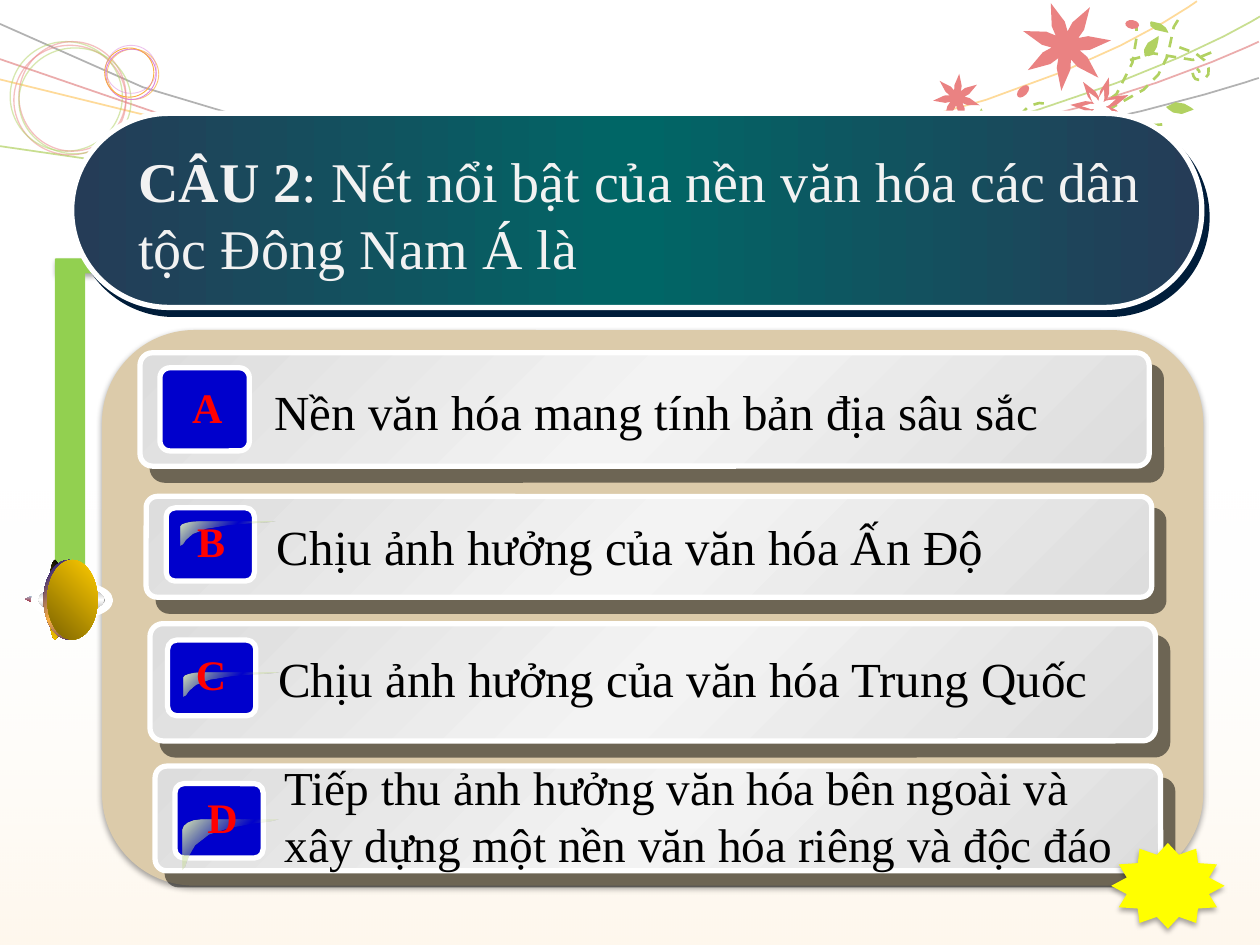
from math import cos, radians, sin

from lxml.etree import SubElement
from pptx import Presentation
from pptx.dml.color import RGBColor
from pptx.enum.dml import MSO_LINE
from pptx.enum.shapes import MSO_SHAPE
from pptx.enum.text import MSO_AUTO_SIZE, PP_ALIGN
from pptx.oxml.ns import qn
from pptx.util import Pt

FONT = "Times New Roman"
RED, GREEN, ORANGE, PINK, WHITE = "EA8282", "B1D161", "F9AF41", "DB85DB", "FFFFFF"
SOFT = ("000000", 35, 3.1, 1.8, 90)
HARD = ("000000", 50, 0, 10.6, 49)


def rgb(color):
    """Turn a hex string into a colour."""
    return RGBColor.from_string(color)


def add_color(parent, color, alpha=100):
    """Append a colour element with its opacity."""
    clr = SubElement(parent, qn("a:srgbClr"), val=color)
    if alpha < 100:
        SubElement(clr, qn("a:alpha"), val=str(alpha * 1000))


def add_shadow(parent, color, alpha, blur, dist, angle):
    """Append an outer shadow to an effect list."""
    shadow = SubElement(parent, qn("a:outerShdw"), blurRad=str(Pt(blur)), dist=str(Pt(dist)),
                        dir=str(angle * 60000), algn="ctr", rotWithShape="0")
    add_color(shadow, color, alpha)


def set_gradient(sp, stops, angle):
    """Fill a shape with an even linear gradient of (colour, opacity) stops."""
    sp.fill.solid()
    solid = sp.element.spPr.find(qn("a:solidFill"))
    grad = solid.makeelement(qn("a:gradFill"), {"rotWithShape": "1"})
    solid.getparent().replace(solid, grad)
    gs_lst = SubElement(grad, qn("a:gsLst"))
    for i, (color, alpha) in enumerate(stops):
        pos = 100000 * i // (len(stops) - 1)
        add_color(SubElement(gs_lst, qn("a:gs"), pos=str(pos)), color, alpha)
    SubElement(grad, qn("a:lin"), ang=str(angle * 60000), scaled="0")


def style(sp, fill=None, line=None, rot=0, shadow=None, dash=False):
    """Set fill, line (colour, width, opacity), rotation and shadow."""
    sp.shadow.inherit = False
    sp.rotation = rot
    if isinstance(fill, str):
        sp.fill.solid()
        sp.fill.fore_color.rgb = rgb(fill)
    elif fill:
        colors, angle = fill
        set_gradient(sp, [(c, 100) for c in colors], angle)
    else:
        sp.fill.background()
    if line:
        color, width, alpha = line
        sp.line.color.rgb = rgb(color)
        sp.line.width = Pt(width)
        if dash:
            sp.line.dash_style = MSO_LINE.DASH
        if alpha < 100:
            clr = sp.element.spPr.find(qn("a:ln")).find(".//" + qn("a:srgbClr"))
            SubElement(clr, qn("a:alpha"), val=str(alpha * 1000))
    else:
        sp.line.fill.background()
    if shadow:
        add_shadow(sp.element.spPr.find(qn("a:effectLst")), *shadow)
    return sp


def add_preset(shapes, kind, box, adj=(), **look):
    """Add a styled preset shape."""
    sp = shapes.add_shape(kind, *[Pt(v) for v in box])
    for i, value in enumerate(adj):
        sp.adjustments[i] = value
    return style(sp, **look)


def add_curve(shapes, pts, steps=4, closed=False, **look):
    """Draw a chain of cubic curves: a start, then three points for each curve."""
    path = [pts[0]]
    for i in range(0, len(pts) - 1, 3):
        for t in [k / steps for k in range(1, steps + 1)]:
            w = ((1 - t) ** 3, 3 * t * (1 - t) ** 2, 3 * t * t * (1 - t), t ** 3)
            path.append([sum(a * p[axis] for a, p in zip(w, pts[i:i + 4])) for axis in (0, 1)])
    path = [(Pt(x), Pt(y)) for x, y in path]
    builder = shapes.build_freeform(*path[0])
    builder.add_line_segments(path[1:], close=closed)
    return style(builder.convert_to_shape(), **look)


def add_text(shapes, box, runs, size, color, align=PP_ALIGN.LEFT, shadow=None):
    """Add a text box of (text, bold) runs."""
    tb = shapes.add_textbox(*[Pt(v) for v in box])
    tf = tb.text_frame
    tf.word_wrap = True
    tf.auto_size = MSO_AUTO_SIZE.SHAPE_TO_FIT_TEXT
    p = tf.paragraphs[0]
    p.alignment = align
    for text, bold in runs:
        r = p.add_run()
        r.text = text
        r.font.size, r.font.bold, r.font.name = Pt(size), bold, FONT
        r.font.color.rgb = rgb(color)
        if shadow:
            solid = r.font._element.find(qn("a:solidFill"))
            effects = solid.makeelement(qn("a:effectLst"), {})
            solid.addnext(effects)
            add_shadow(effects, *shadow)


def flower(shapes, cx, cy, radius, start, rot, color):
    """Draw a flower with seven pointed petals."""
    def polar(r, angle):
        a = radians(angle)
        return cx + r * radius * cos(a), cy + r * radius * sin(a)
    step = 360 / 7
    pts = [polar(0.32, start - step / 2)]
    for tip in [start + i * step for i in range(7)]:
        notch = polar(0.32, tip + step / 2)
        pts += [pts[-1], polar(0.68, tip - 19), polar(1, tip), polar(0.68, tip + 19), notch, notch]
    add_curve(shapes, pts, 2, closed=True, fill=color, rot=rot)


def backdrop(s, w, h):
    """Place the tint, waves and rings."""
    tint = add_preset(s.shapes, MSO_SHAPE.RECTANGLE, (0, 275.8, w, h - 275.8))
    set_gradient(tint, [(WHITE, 0), (ORANGE, 10)], 90)
    waves = s.shapes.add_group_shape().shapes
    for start, bend, end, color, alpha in [
            ((0, 13.7), (321, 183), (719.3, 44.6), "B2B2B2", 100),
            ((0, 33.8), (383.8, 189.4), (719.3, 23.8), "D85A5A", 50),
            ((0, 45.4), (450, 175.7), (684, 0.7), "FEA300", 40),
            ((0, 83.5), (470, 168.5), (720, 9.4), GREEN, 70)]:
        add_curve(waves, [start, bend, end, end], 12, line=(color, 1, alpha))
    rings = s.shapes.add_group_shape().shapes
    for box, color, width, alpha in [
            ((7.9, 25.9, 64.1, 62.6), RED, 0.75, 50), ((5.8, 23.8, 64.1, 62.6), GREEN, 0.75, 50),
            ((10.8, 23.8, 61.2, 62.6), RED, 0.75, 50), ((10.8, 27.4, 64.1, 60.5), GREEN, 0.75, 50),
            ((61.2, 28.1, 29.5, 28.8), ORANGE, 0.5, 70), ((60.5, 28.1, 28.8, 28.8), PINK, 0.5, 100),
            ((59.8, 27.4, 28.1, 28.1), ORANGE, 0.5, 100), ((60.5, 25.9, 28.8, 27.4), PINK, 0.5, 50)]:
        add_preset(rings, MSO_SHAPE.OVAL, box, line=(color, width, alpha))


def bouquet(s):
    """Place the flowers, leaves and vines."""
    sh = s.shapes.add_group_shape().shapes
    for rot, pts in [
            (141.8, [(553, 80.6), (559.4, 64.8), (547.2, 56.9), (547.2, 56.9)]),
            (138, [(702, 49.7), (679, 36.7), (673.9, 60.5), (654.5, 65.5), (635, 69.8),
                   (628.6, 58.3), (609.8, 62.6), (591.8, 67), (589.7, 78.5), (577.4, 79.2)]),
            (155.3, [(688.3, 46.1), (676.1, 36.7), (676.8, 28.1), (679.7, 25.2), (683.3, 22.3),
                     (686.2, 24.5), (687.6, 25.9), (688.3, 28.1), (687.6, 31.7), (685.4, 31.7),
                     (684, 31), (683.3, 28.8), (684, 28.1)]),
            (138, [(688.3, 46.1), (666, 41.8), (670.3, 18.7), (650.2, 18)]),
            (138, [(599.8, 66.2), (587.5, 69.8), (582.5, 59), (582.5, 59)]),
            (95.1, [(662.4, 55.4), (643, 22.3), (606.2, 29.5), (606.2, 29.5)]),
            (28.6, [(658.1, 65.5), (637.9, 74.9), (640.1, 87.1), (645.1, 91.4), (650.2, 96.5),
                    (655.2, 95), (657.4, 92.2), (658.8, 90), (656.6, 84.2), (653.8, 84.2),
                    (650.9, 85), (650.2, 87.1), (650.9, 89.3)])]:
        add_curve(sh, pts, line=(GREEN, 1.5, 100), rot=rot, dash=True)
    for rot, base, left, tip, right in [
            (133.1, (555.8, 70.6), (563.8, 70.6), (564.5, 64.1), (558, 61.9)),
            (138, (663.1, 21.6), (656.6, 15.1), (660.2, 10.1), (669.6, 20.9)),
            (138, (665.3, 25.2), (660.2, 19.4), (651.6, 28.8), (663.8, 33.1)),
            (98.2, (673.9, 54), (681.8, 63.4), (674.6, 69.8), (666.7, 64.1))]:
        add_curve(sh, [base, left, tip, tip, right, base, base], closed=True, fill=GREEN, rot=rot)
    for box, rot in [((580.3, 49.7, 8.6, 5), 133.8), ((643, 11.5, 7.9, 5), 8.7)]:
        add_preset(sh, MSO_SHAPE.OVAL, box, fill=RED, rot=rot)
    flower(sh, 547.2, 55.8, 13.7, 121, 51.8, RED)
    flower(sh, 627.8, 60.5, 17.3, -109, 138, RED)
    flower(sh, 627.8, 60.5, 10, -111, 138, WHITE)
    flower(sh, 609.1, 25.2, 25.9, 134, 64.9, RED)


def hanger(s, x, y):
    """Place the green bracket and the gold knob below it."""
    bracket = s.shapes.add_group_shape().shapes
    add_preset(bracket, MSO_SHAPE.RECTANGLE, (x, y, 123.8, 8.6), fill="92D050", shadow=SOFT)
    add_preset(bracket, MSO_SHAPE.RECTANGLE, (x - 83.5, y + 83.5, 183.6, 17.3), fill="92D050", rot=90)
    knob = s.shapes.add_group_shape().shapes
    for dx, dy, w, h, rot, end in [(4.3, 184.3, 7.9, 2.2, 0, "E0CED0"), (5.7, 203.8, 7.9, 2.2, 180, "A7B8CC"),
                                   (-16.6, 192.2, 3.6, 5, 270, "A7B8CC")]:
        add_preset(knob, MSO_SHAPE.UP_ARROW, (x + dx, y + dy, w, h), (0.52, 1),
                   fill=(("A22E3F", end), 0), rot=rot)
    for dx, dy, w, h, colors, angle, line in [
            (0.7, 174.2, 17.3, 42.5, ("767676", WHITE, "767676"), 90, (WHITE, 4.5, 100)),
            (1.4, 176.4, 15.1, 37.4, ("A2A2A2", WHITE, "A2A2A2"), 0, None),
            (-23, 191.5, 45.4, 7.2, ("000000", "FFCC00"), 45, None),
            (-15.1, 180.7, 45.4, 28.8, ("00008A", ORANGE, "00008A"), 315, None),
            (-13, 180.7, 45.4, 28.8, ("FFCC00", "7C6300"), 45, None)]:
        add_preset(knob, MSO_SHAPE.OVAL, (x + dx, y + dy, w, h), fill=(colors, angle), line=line, rot=90)


def question(s, x, y, w, h):
    """Place the question banner."""
    add_preset(s.shapes, MSO_SHAPE.ROUNDED_RECTANGLE, (x, y, w, h), (0.5,), line=(WHITE, 3, 100),
               fill=(("253C57", "006666", "253C57"), 0), shadow=("001D3A", 100, 0, 5, 53))
    add_text(s.shapes, (x + 31, y + 15.1, 606.2, 85), [
        ("CÂU 2", True), (": Nét nổi bật của nền văn hóa các dân tộc Đông Nam Á là", False)], 32, "F2F2F2")


def answer(s, box, badge, gloss, letter, label, words, size=28):
    """Place one answer bar; badge, gloss, letter and label are offsets in its box."""
    x, y = box[:2]
    sh = s.shapes.add_group_shape().shapes
    add_preset(sh, MSO_SHAPE.ROUNDED_RECTANGLE, box, (0.11,), line=(WHITE, 3, 100), shadow=HARD,
               fill=(("DDDDDD", "F3F3F3", "DDDDDD"), 45))
    add_preset(sh, MSO_SHAPE.ROUNDED_RECTANGLE, (x + badge[0], y + badge[1], *badge[2:]), (0.12,),
               fill="0000CC", line=(WHITE, 3, 100))
    if gloss:
        gx, gy, gh = gloss
        pts = [(10.8, 0), (4.7, 0), (0, 0.1), (0, 0.2), (0, 0.2), (0, 0.98), (0, 0.98),
               (2.9, 1), (1.4, 0.53), (15.1, 0.3), (28.8, 0.08), (55.4, 0.05), (54.7, 0)]
        sp = add_curve(sh, [(x + gx + px, y + gy + py * gh) for px, py in pts], closed=True)
        set_gradient(sp, [("D9E7BF", 100), (GREEN, 0), ("D9E7BF", 100)], 45)
    name, dx, dy = letter
    add_text(sh, (x + dx, y + dy, 39.6, 36), [(name, True)], 24, "FF0000", PP_ALIGN.CENTER,
             ("000000", 100, 0, 2, 45))
    dx, dy, tw, th = label
    add_text(sh, (x + dx, y + dy, tw, th), [(words, False)], size, "000000")


def main():
    """Build the quiz slide."""
    prs = Presentation()
    prs.slide_width, prs.slide_height = Pt(720), Pt(540)
    s = prs.slides.add_slide(prs.slide_layouts[6])
    backdrop(s, 720, 540)
    bouquet(s)
    add_preset(s.shapes, MSO_SHAPE.ROUNDED_RECTANGLE, (58.3, 188.6, 629.3, 317.5), fill="DCCBAA", shadow=SOFT)
    hanger(s, 31.7, 147.6)
    question(s, 41, 64.8, 645.8, 110.9)
    answer(s, (80, 201.6, 576.7, 64.8), (11.4, 8.6, 51.1, 47.5), None, ("A", 18.6, 13),
           (69.8, 13, 514, 41), "Nền văn hóa mang tính bản địa sâu sắc")
    answer(s, (83.5, 283.7, 574.6, 57.6), (11.5, 6.5, 50.4, 41.8), (19.5, 14.4, 13.7), ("B", 17.3, 7.2),
           (67.7, 7.9, 515.5, 41), "Chịu ảnh hưởng của văn hóa Ấn Độ")
    answer(s, (85.7, 356.4, 574.6, 67), (10.1, 9.4, 50.4, 43.2), (19.4, 28.1, 13.7), ("C", 15.1, 10.8),
           (66.2, 10.8, 510.5, 41), "Chịu ảnh hưởng của văn hóa Trung Quốc")
    answer(s, (88.6, 437.8, 574.6, 59.8), (11.4, 10, 50.4, 42.5), (15.8, 30.9, 28.8), ("D", 18.7, 10.8),
           (66.9, -8, 501.1, 72.7),
           "Tiếp thu ảnh hưởng văn hóa bên ngoài và xây dựng một nền văn hóa riêng và độc đáo", 27)
    add_preset(s.shapes, MSO_SHAPE.STAR_12_POINT, (635, 481.7, 64.8, 49), fill="FFFF00", shadow=SOFT)
    prs.save("out.pptx")


if __name__ == "__main__":
    main()
